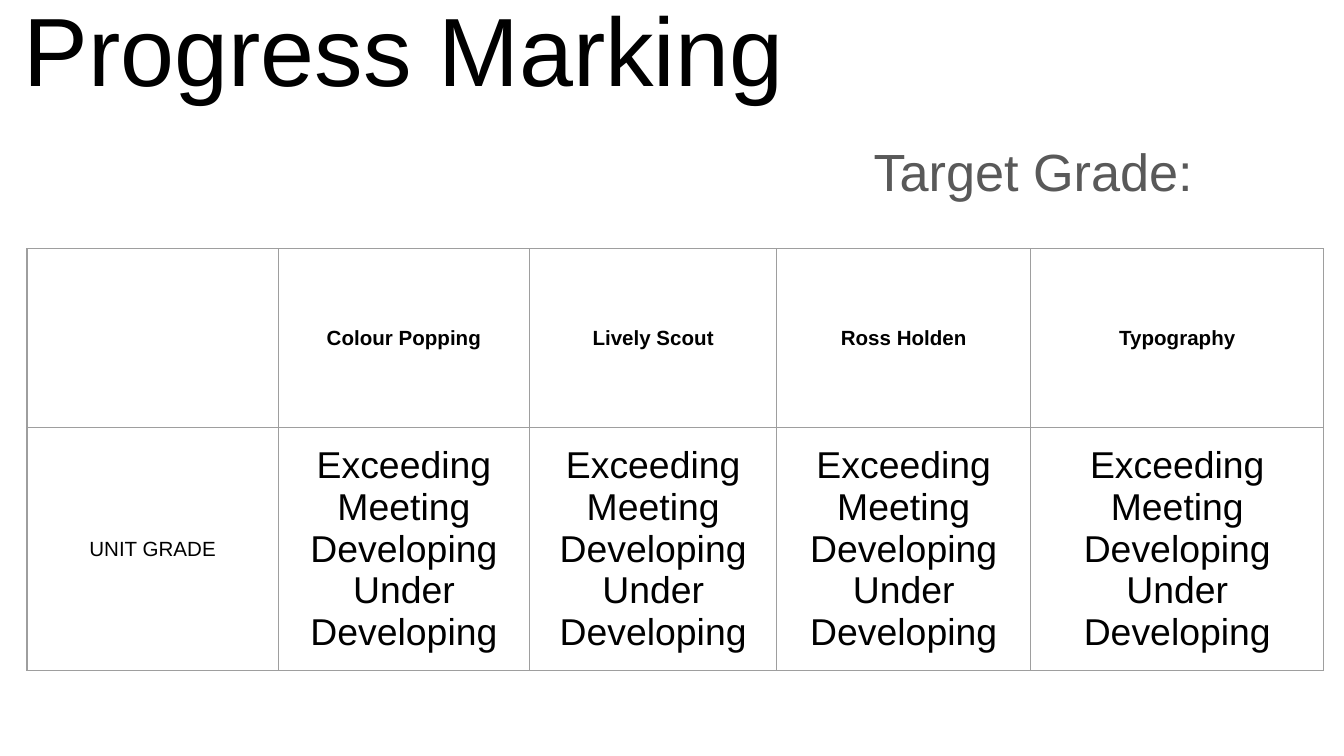
from lxml import etree
from pptx import Presentation
from pptx.dml.color import RGBColor
from pptx.enum.text import MSO_ANCHOR, MSO_AUTO_SIZE, PP_ALIGN
from pptx.oxml.ns import qn
from pptx.util import Cm, Pt

BLACK = RGBColor(0x00, 0x00, 0x00)
GREY = RGBColor(0x59, 0x59, 0x59)
RULE = RGBColor(0x9E, 0x9E, 0x9E)

TOP, MIDDLE, BOTTOM = MSO_ANCHOR.TOP, MSO_ANCHOR.MIDDLE, MSO_ANCHOR.BOTTOM
LEFT, CENTER = PP_ALIGN.LEFT, PP_ALIGN.CENTER
NO_FIT = MSO_AUTO_SIZE.NONE

UNITS = ["Colour Popping", "Lively Scout", "Ross Holden", "Typography"]
GRADES = ["Exceeding", "Meeting", "Developing", "Under Developing"]
WIDTHS = [4.75, 4.75, 4.67, 4.8, 5.54]
HEIGHTS = [3.38, 4.6]


def apply(item, values):
    for name, value in values.items():
        setattr(item, name, value)


def write(frame, lines, size, color=BLACK, bold=False, align=CENTER, spacing=1.0):
    """Fill a text frame with one paragraph for each line."""
    frame.text = "\n".join(lines)
    for para in frame.paragraphs:
        apply(para, {"alignment": align, "line_spacing": spacing,
                     "space_before": Pt(0), "space_after": Pt(0)})
        for run in para.runs:
            apply(run.font, {"name": "Arial", "size": Pt(size), "bold": bold})
            run.font.color.rgb = color


def place(holder, box, text, anchor, **style):
    """Move a placeholder to box (left, top, width, height in cm) and fill it."""
    apply(holder, dict(zip(("left", "top", "width", "height"), map(Cm, box))))
    frame = holder.text_frame
    apply(frame, {"word_wrap": True, "auto_size": NO_FIT, "vertical_anchor": anchor})
    apply(frame, {f"margin_{side}": Cm(0.25)
                  for side in ("left", "top", "right", "bottom")})
    write(frame, [text], align=LEFT, **style)


def border(cell):
    props = cell._tc.get_or_add_tcPr()
    for index, side in enumerate(("lnL", "lnR", "lnT", "lnB")):
        line = etree.Element(qn(f"a:{side}"), w=str(Pt(0.75)))
        fill = etree.SubElement(line, qn("a:solidFill"))
        etree.SubElement(fill, qn("a:srgbClr"), val=str(RULE))
        props.insert(index, line)


def add_grid(slide):
    frame = slide.shapes.add_table(len(HEIGHTS), len(WIDTHS), Cm(0.51), Cm(4.7),
                                   Cm(sum(WIDTHS)), Cm(sum(HEIGHTS)))
    table = frame.table
    apply(table, {"first_row": False, "horz_banding": False})
    for column, width in zip(table.columns, WIDTHS):
        column.width = Cm(width)
    for row, height in zip(table.rows, HEIGHTS):
        row.height = Cm(height)
    for cell in table.iter_cells():
        apply(cell, {"vertical_anchor": MIDDLE,
                     "margin_left": Cm(0.15), "margin_right": Cm(0.15),
                     "margin_top": Cm(0.13), "margin_bottom": Cm(0.13)})
        cell.fill.background()
        border(cell)
    write(table.cell(1, 0).text_frame, ["UNIT GRADE"], 11)
    for col, unit in enumerate(UNITS, 1):
        write(table.cell(0, col).text_frame, [unit], 11, bold=True)
        write(table.cell(1, col).text_frame, GRADES, 20)


def main():
    deck = Presentation()
    apply(deck, {"slide_width": Cm(25.4), "slide_height": Cm(14.29)})
    slide = deck.slides.add_slide(deck.slide_layouts[0])
    title, target = slide.placeholders
    place(title, (0.2, 0.43, 17.68, 1.83), "Progress Marking", BOTTOM, size=52)
    place(target, (16.26, 2.24, 9.14, 2.21), "Target Grade:", TOP,
          size=28, color=GREY, spacing=1.12)
    add_grid(slide)
    deck.save("out.pptx")


if __name__ == "__main__":
    main()
